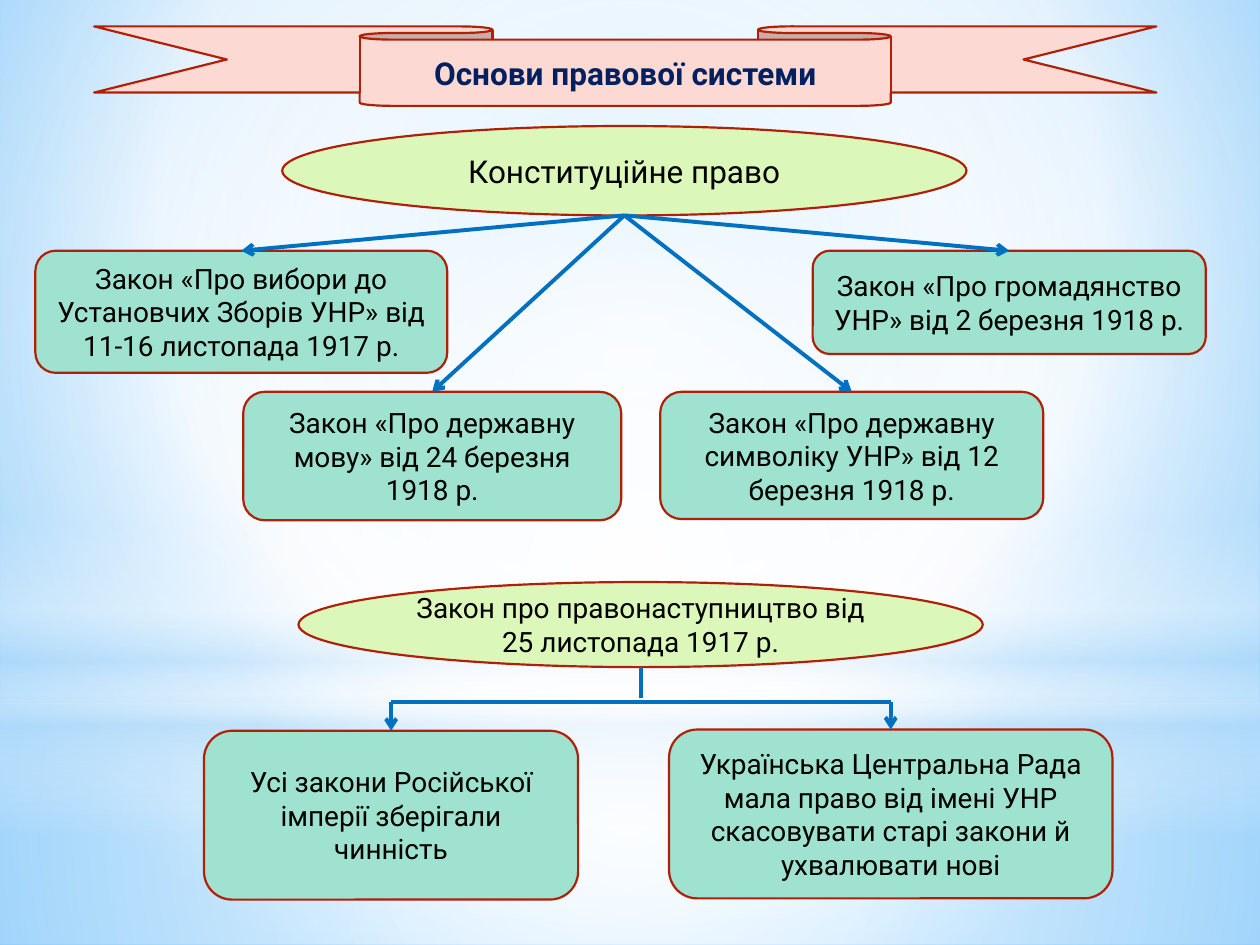
"""Build the slide on the foundations of the legal system."""
from lxml import etree
from pptx import Presentation
from pptx import util as u
from pptx.dml.color import RGBColor
from pptx.enum import shapes, text
from pptx.oxml import ns

Pt = u.Pt
FORM = shapes.MSO_SHAPE
PINK = RGBColor(0xFC, 0xD9, 0xD3)
LIME = RGBColor(0xDC, 0xF7, 0xBA)
MINT = RGBColor(0x9E, 0xE2, 0xCF)
RED = RGBColor(0xB0, 0x1F, 0x07)
BLUE = RGBColor(0x00, 0x70, 0xC0)
NAVY = RGBColor(0x00, 0x20, 0x60)
BLACK = RGBColor(0x00, 0x00, 0x00)
WHITE = RGBColor(0xFF, 0xFF, 0xFF)
PALE = RGBColor(0xB4, 0xDC, 0xFA)
SKY = RGBColor(0x9E, 0xD5, 0xFF)
DEEP = RGBColor(0x5B, 0xB9, 0xFF)


def shade(props, stops, focus):
    """Swap the solid fill for a gradient: round about focus, or downward without one."""
    fill = etree.Element(ns.qn("a:gradFill"), rotWithShape="1")
    items = etree.SubElement(fill, ns.qn("a:gsLst"))
    for pos, color, alpha in stops:
        stop = etree.SubElement(items, ns.qn("a:gs"), pos=str(pos * 1000))
        tint = etree.SubElement(stop, ns.qn("a:srgbClr"), val=str(color))
        etree.SubElement(tint, ns.qn("a:alpha"), val=str(alpha * 1000))
    if focus:
        way = etree.SubElement(fill, ns.qn("a:path"), path="circle")
        sides = {side: str(part * 1000) for side, part in zip("ltrb", focus)}
        etree.SubElement(way, ns.qn("a:fillToRect"), sides)
    else:
        etree.SubElement(fill, ns.qn("a:lin"), ang="5400000", scaled="0")
    old = props.find(ns.qn("a:solidFill"))
    props.replace(old, fill)


def label(form, box, color, words, size=16, ink=BLACK, bold=False):
    """Add an outlined shape with centred text."""
    shape = slide.shapes.add_shape(form, *map(Pt, box))
    shape.shadow.inherit = False
    shape.fill.solid()
    shape.fill.fore_color.rgb = color
    shape.line.color.rgb = RED
    shape.line.width = Pt(1.25)
    frame = shape.text_frame
    frame.word_wrap = True
    frame.vertical_anchor = text.MSO_ANCHOR.MIDDLE
    para = frame.paragraphs[0]
    para.alignment = text.PP_ALIGN.CENTER
    run = para.add_run()
    run.text = words
    run.font.name = "Roboto"
    run.font.size = Pt(size)
    run.font.bold = bold
    run.font.color.rgb = ink


deck = Presentation()
deck.slide_width, deck.slide_height = Pt(720), Pt(540)
slide = deck.slides.add_slide(deck.slide_layouts[6])

slide.background.fill.solid()
slide.background.fill.fore_color.rgb = WHITE
shade(slide.element.cSld.bg.bgPr,
      [(0, SKY, 100), (60, WHITE, 100), (100, DEEP, 100)], (20, 10, 20, 60))

MID = (50, 50, 50, 50)
glows = [
    (FORM.RECTANGLE, 401.8, 138.2,
     [(0, WHITE, 91), (37, WHITE, 76), (100, PALE, 79)], MID),
    (FORM.RECTANGLE, 0, 401.8,
     [(0, WHITE, 89), (48, WHITE, 62), (100, PALE, 79)], MID),
    (FORM.RECTANGLE, 296.6, 180,
     [(0, WHITE, 0), (29, WHITE, 30), (45, PALE, 40),
      (55, WHITE, 26), (65, PALE, 60), (100, WHITE, 0)], None),
    (FORM.OVAL, 126, 401.8, [(0, WHITE, 100), (56, WHITE, 0)], MID),
]
for form, top, high, stops, focus in glows:
    glow = slide.shapes.add_shape(form, 0, Pt(top), Pt(720), Pt(high))
    glow.shadow.inherit = False
    glow.line.fill.background()
    glow.fill.solid()
    glow.fill.fore_color.rgb = WHITE
    shade(glow.element.spPr, stops, focus)

label(FORM.DOWN_RIBBON, (53.8, 15.1, 607, 45.4), PINK,
      "Основи правової системи", 18, NAVY, True)
label(FORM.OVAL, (161.3, 72, 391, 51.1), LIME, "Конституційне право", 18)
label(FORM.OVAL, (170.6, 332.6, 391, 48.6), LIME,
      "Закон про правонаступництво від 25 листопада 1917 р.")

laws = [
    ((20.2, 143.3, 235.4, 69.8),
     "Закон «Про вибори до Установчих Зборів УНР» від 11-16 листопада 1917 р."),
    ((139, 223.9, 216, 73.4), "Закон «Про державну мову» від 24 березня 1918 р."),
    ((377.3, 223.9, 218.9, 72.7),
     "Закон «Про державну символіку УНР» від 12 березня 1918 р."),
    ((464.4, 143.3, 224.6, 59), "Закон «Про громадянство УНР» від 2 березня 1918 р."),
]
norms = [
    ((116.6, 417.6, 213.8, 96.5), "Усі закони Російської імперії зберігали чинність"),
    ((382.3, 416.9, 253.4, 96.5),
     "Українська Центральна Рада мала право від імені УНР "
     "скасовувати старі закони й ухвалювати нові"),
]
BAR = 401
lines = [(366.1, 381.2, 366.1, 398.9, False), (223.5, BAR, 509, BAR, False)]
for box, words in laws + norms:
    label(FORM.ROUNDED_RECTANGLE, box, MINT, words)
    mid = box[0] + box[2] / 2
    start = (mid, BAR) if box[1] > BAR else (356.8, 123.1)
    lines.append((*start, mid, box[1], True))

for *ends, tip in lines:
    line = slide.shapes.add_connector(shapes.MSO_CONNECTOR.STRAIGHT, *map(Pt, ends))
    line.line.color.rgb = BLUE
    line.line.width = Pt(2.25)
    if tip:
        etree.SubElement(line.line._get_or_add_ln(), ns.qn("a:tailEnd"), type="arrow")
    etree.SubElement(line.element.spPr, ns.qn("a:effectLst"))

deck.save("out.pptx")
